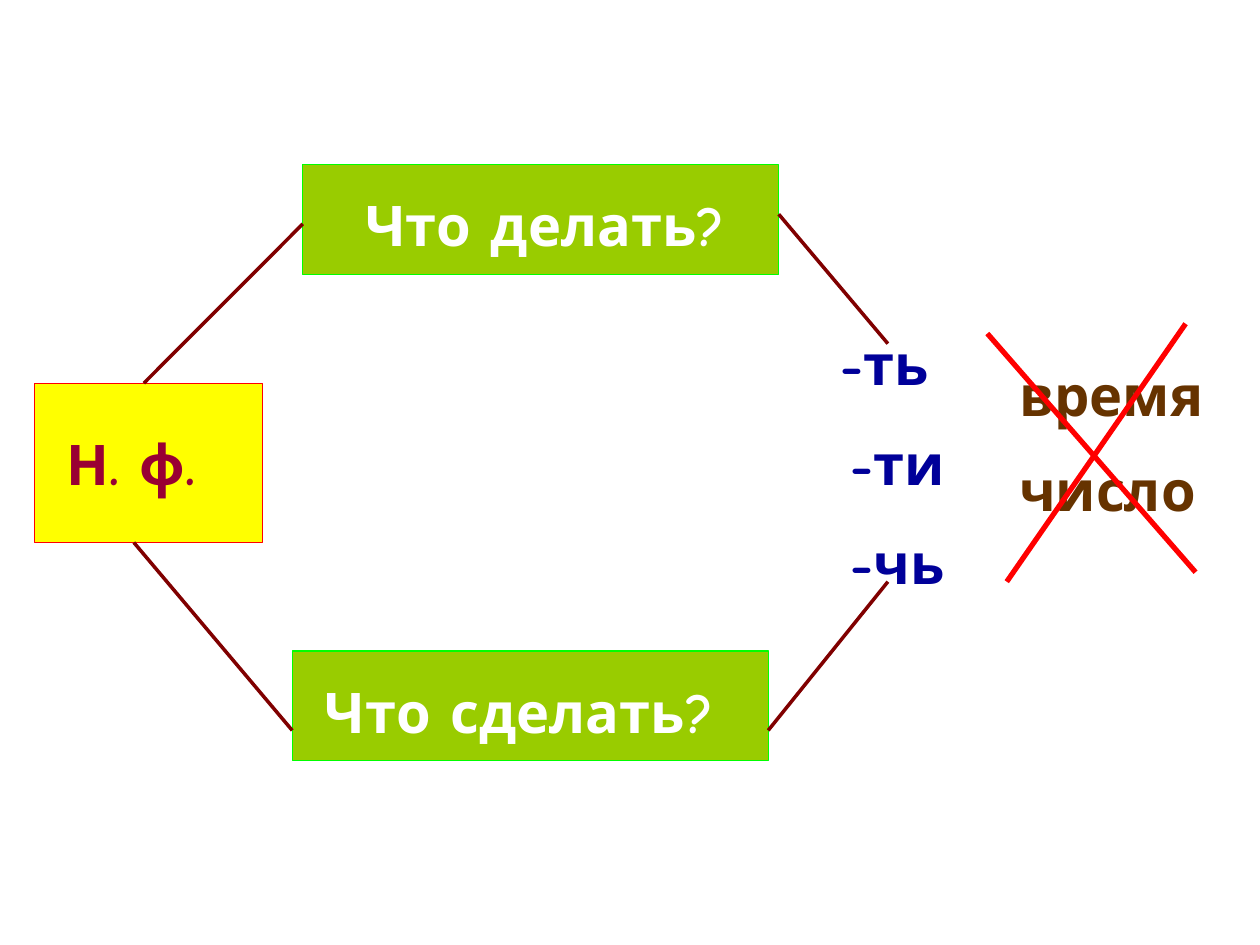
"""Build a slide with a diagram of the infinitive: its questions, endings and missing features."""
from lxml import etree
from pptx import Presentation
from pptx import util as u
from pptx.dml.color import RGBColor
from pptx.enum import shapes
from pptx.oxml.ns import qn

Pt = u.Pt


def color(value):
    return RGBColor.from_string(value)


deck = Presentation()
deck.slide_width, deck.slide_height = Pt(720), Pt(540)
slide = deck.slides.add_slide(deck.slide_layouts[6])

panels = [
    (19.6, 219, 130.4, 91, "FFFF00", "FF0000"),
    (173, 94.2, 272, 62.6, "99CC00", "00FF00"),
    (167, 372, 272, 62.6, "99CC00", "00FF00"),
]
for left, top, width, height, fill, border in panels:
    panel = slide.shapes.add_shape(
        shapes.MSO_SHAPE.RECTANGLE, Pt(left), Pt(top), Pt(width), Pt(height))
    panel.shadow.inherit = False
    panel.fill.solid()
    panel.fill.fore_color.rgb = color(fill)
    panel.line.color.rgb = color(border)
    panel.line.width = Pt(0.75)

labels = [
    (31, 242, 107, 45.6, "Н. ф.", "990033"),
    (201.6, 105.6, 260.6, 45.6, "Что делать?", "FFFFFF"),
    (178.6, 383.4, 260.6, 45.6, "Что сделать?", "FFFFFF"),
    (473, 185, 79.2, 45.6, "-ть", "000099"),
    (479, 242, 79.2, 45.6, "-ти", "000099"),
    (479, 298.4, 79.2, 45.6, "-чь", "000099"),
    (575.3, 202.3, 124.6, 103, "время\nчисло", "663300"),
]
for left, top, width, height, wording, ink in labels:
    label = slide.shapes.add_textbox(Pt(left), Pt(top), Pt(width), Pt(height))
    frame = label.text_frame
    frame.word_wrap = True
    frame.text = wording
    for paragraph in frame.paragraphs:
        for run in paragraph.runs:
            run.font.name = "Comic Neue"
            run.font.size = Pt(32)
            run.font.bold = True
            run.font.color.rgb = color(ink)
    for paragraph in frame.paragraphs[1:]:
        paragraph.space_before = Pt(16)

links = [
    (76.5, 310, 167, 417.4, "800000", 2),
    (82.2, 219, 173, 128, "800000", 2),
    (445, 122.4, 507.4, 196.4, "800000", 2),
    (439, 417.4, 507.4, 332.4, "800000", 2),
    (677.5, 185, 575.3, 332.4, "FF0000", 3),
    (564.2, 190.6, 683.2, 327, "FF0000", 3),
]
for x1, y1, x2, y2, ink, weight in links:
    link = slide.shapes.add_connector(
        shapes.MSO_CONNECTOR.STRAIGHT, Pt(x1), Pt(y1), Pt(x2), Pt(y2))
    link.line.color.rgb = color(ink)
    link.line.width = Pt(weight)
    etree.SubElement(link._element.spPr, qn("a:effectLst"))

deck.save("out.pptx")
